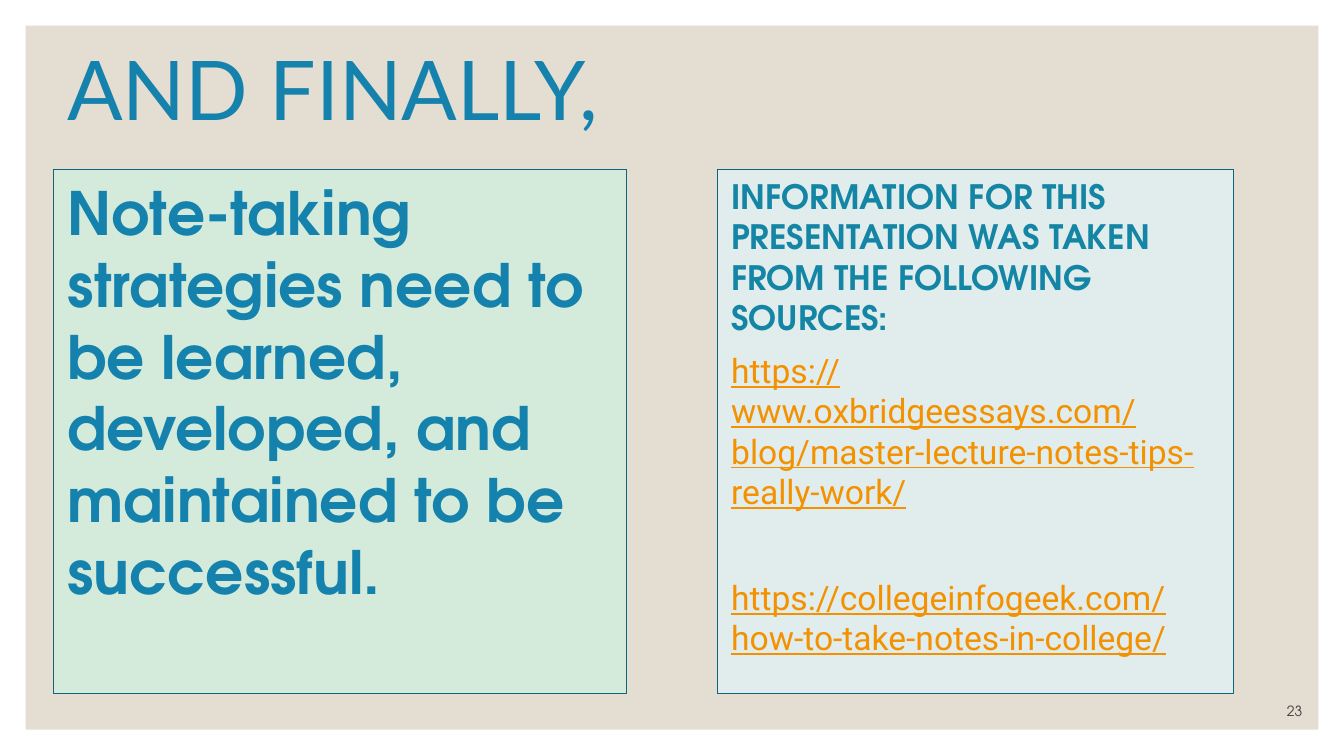
import pptx
import pptx.util
import pptx.dml.color
import pptx.enum.text
import pptx.enum.shapes
import pptx.oxml
from pptx.util import Inches, Pt


def color(value):
    return pptx.dml.color.RGBColor.from_string(value)


def format_paragraph(para, font_name, size, font_color, bold=False, underline=False):
    for span in para.runs:
        span.font.name = font_name
        span.font.size = Pt(size)
        span.font.color.rgb = color(font_color)
        span.font.bold = bold
        span.font.underline = underline


HEADING_FONT = "TeX Gyre Adventor"

deck = pptx.Presentation()
deck.slide_width = Inches(10)
deck.slide_height = Inches(10 * 9 / 16)
page = deck.slides.add_slide(deck.slide_layouts[3])
title, message_box, sources_box = page.placeholders

panel = page.shapes.add_shape(
    pptx.enum.shapes.MSO_SHAPE.RECTANGLE, Inches(0.19), Inches(0.19), Inches(9.62), Inches(5.24))
panel.shadow.inherit = False
panel.fill.solid()
panel.fill.fore_color.rgb = color("E3DED1")
panel.line.fill.background()
page.shapes._spTree.insert(2, panel._element)

title.left, title.top, title.width, title.height = Inches(0.4), Inches(0.21), Inches(9.21), Inches(0.88)
title.text_frame.text = "AND FINALLY,"
title.text_frame.vertical_anchor = pptx.enum.text.MSO_ANCHOR.MIDDLE
title.text_frame.paragraphs[0].alignment = pptx.enum.text.PP_ALIGN.LEFT
format_paragraph(title.text_frame.paragraphs[0], "Lato", 44.1, "1482AC")

message = [
    ("Note-taking strategies need to be learned, developed, and maintained to be successful.",
     0, (HEADING_FONT, 32, "1482AC", True)),
]
link_style = ("Roboto", 18, "F49100", False, True)
sources = [
    ("INFORMATION FOR THIS PRESENTATION WAS TAKEN FROM THE FOLLOWING SOURCES:",
     0, (HEADING_FONT, 18, "1485A4", True)),
    ("https://www.oxbridgeessays.com/blog/master-lecture-notes-tips-really-work/", 6.8, link_style),
    ("https://collegeinfogeek.com/how-to-take-notes-in-college/", 35.2, link_style),
]

for box, left, width, fill, content in (
    (message_box, 0.4, 4.26, "D4EBDB", message),
    (sources_box, 5.34, 3.84, "E0EDEC", sources),
):
    box.left, box.top, box.width, box.height = Inches(left), Inches(1.26), Inches(width), Inches(3.9)
    box.fill.solid()
    box.fill.fore_color.rgb = color(fill)
    box.line.color.rgb = color("0F647B")
    box.line.width = Pt(0.75)
    frame = box.text_frame
    frame.auto_size = pptx.enum.text.MSO_AUTO_SIZE.NONE
    frame.text = "\n".join(text for text, space, style in content)
    for para, (text, space, style) in zip(frame.paragraphs, content):
        properties = para._p.get_or_add_pPr()
        properties.set("marL", "0")
        properties.set("indent", "0")
        properties.append(pptx.oxml.parse_xml(
            '<a:buNone xmlns:a="http://schemas.openxmlformats.org/drawingml/2006/main"/>'))
        para.space_before = Pt(space)
        format_paragraph(para, *style)

number_box = page.shapes.add_textbox(Inches(8.59), Inches(5.17), Inches(1.2), Inches(0.23))
number_box.text_frame.word_wrap = True
number_box.text_frame.vertical_anchor = pptx.enum.text.MSO_ANCHOR.BOTTOM
number_box.text_frame.text = "23"
number_box.text_frame.paragraphs[0].alignment = pptx.enum.text.PP_ALIGN.RIGHT
format_paragraph(number_box.text_frame.paragraphs[0], HEADING_FONT, 7.5, "404040")

deck.save("out.pptx")
